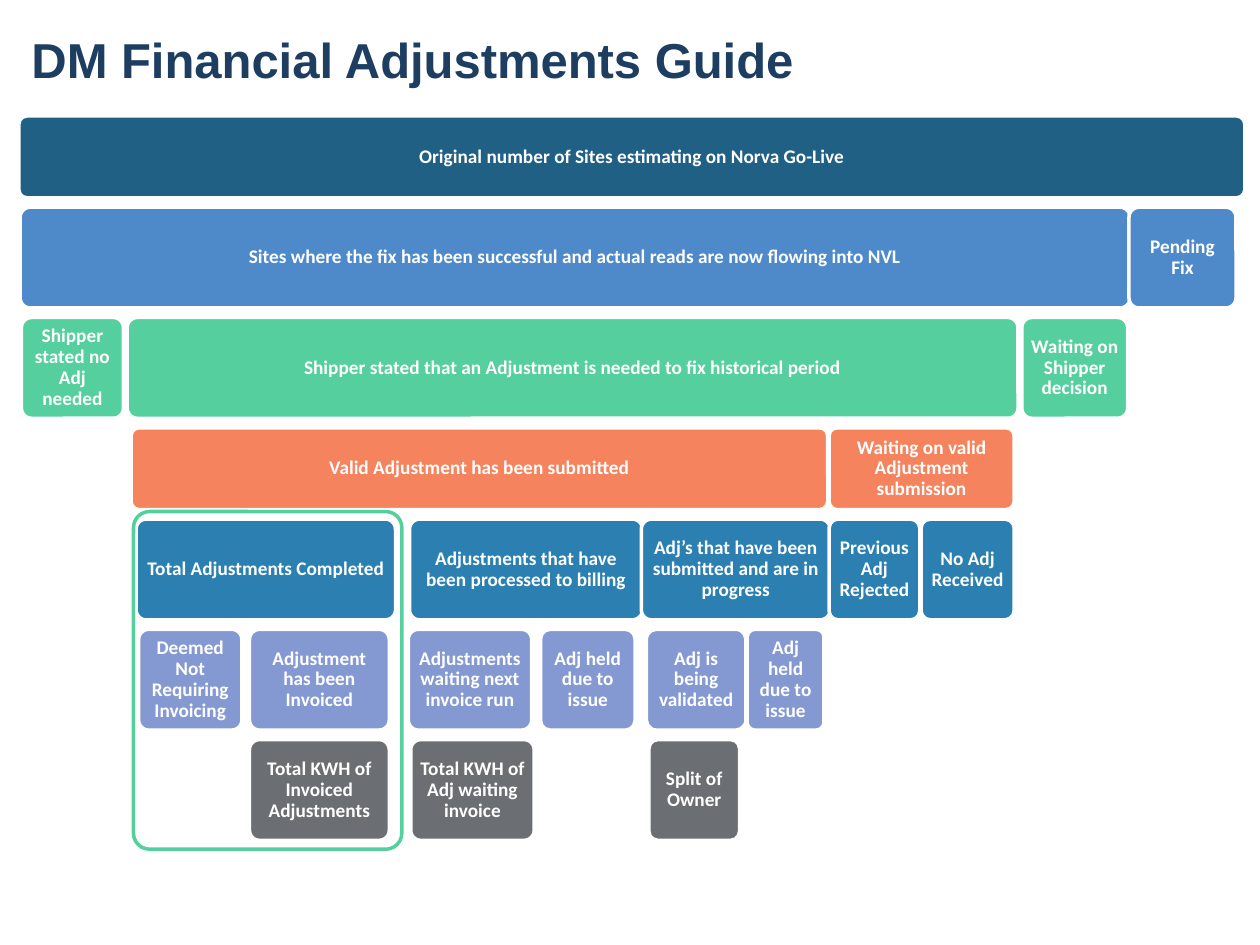
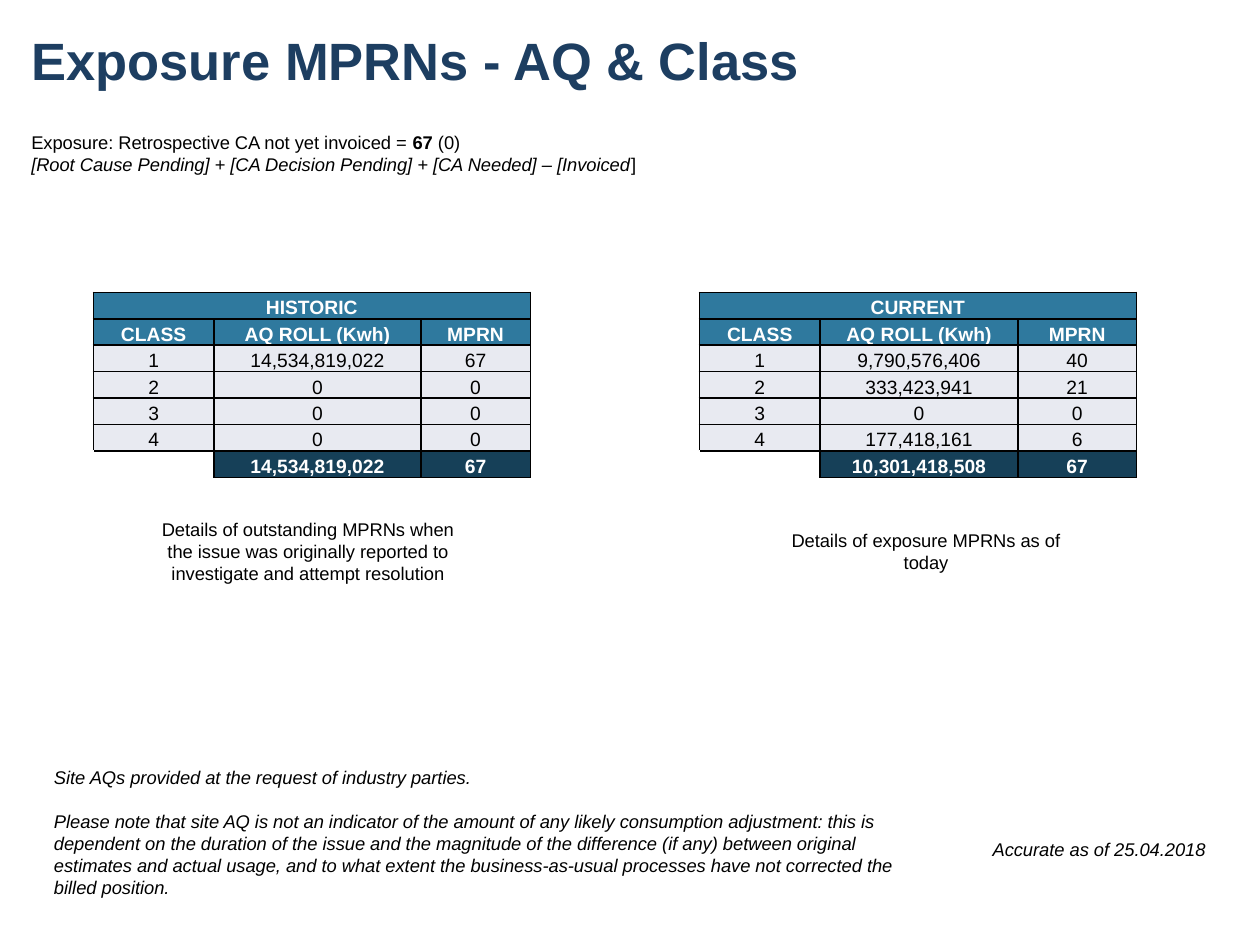
from typing import NamedTuple

from lxml import etree
from pptx import Presentation
from pptx import util as u
from pptx.dml.color import RGBColor
from pptx.enum import shapes, text
from pptx.oxml.ns import qn

WHITE = RGBColor(0xFF, 0xFF, 0xFF)
BLACK = RGBColor(0x00, 0x00, 0x00)
NAVY = RGBColor(0x1D, 0x3E, 0x61)
DEEP_TEAL = RGBColor(0x20, 0x60, 0x85)
SKY = RGBColor(0x4E, 0x8A, 0xCA)
GREEN = RGBColor(0x56, 0xCF, 0x9E)
CORAL = RGBColor(0xF5, 0x83, 0x5D)
BLUE = RGBColor(0x2B, 0x80, 0xB1)
LAVENDER = RGBColor(0x84, 0x99, 0xD2)
GREY = RGBColor(0x6B, 0x6E, 0x72)
HEADER = RGBColor(0x2F, 0x79, 0x9E)
BODY = RGBColor(0xE8, 0xEA, 0xF1)
TOTAL = RGBColor(0x16, 0x40, 0x58)

TITLE_FONT = dict(name="Arial", bold=True, color=NAVY)
BOX_FONT = dict(name="Calibri", size=u.Pt(11), bold=True, color=WHITE)
NOTE_FONT = dict(name="Arial", size=u.Pt(10.5), color=BLACK)
ITALIC_FONT = dict(NOTE_FONT, italic=True)
CELL_FONT = dict(name="Arial", size=u.Pt(11), color=BLACK)
STRONG_CELL_FONT = dict(CELL_FONT, bold=True, color=WHITE)

CENTER = text.PP_ALIGN.CENTER
LEFT = text.PP_ALIGN.LEFT
MARGINS = ("margin_left", "margin_right", "margin_top", "margin_bottom")
NO_MARGINS = dict.fromkeys(MARGINS, 0)
BOX_MARGINS = dict.fromkeys(MARGINS, u.Inches(0.05))
CELL_MARGINS = dict(dict.fromkeys(MARGINS, u.Inches(0.01)), margin_bottom=0)

LEVEL_TOP = u.Inches(0.92)
LEVEL_GAP = u.Inches(0.15) // 2
ROW_HEIGHT = u.Inches(0.21)


class Box(NamedTuple):
    label: str
    left: float
    width: float


class Level(NamedTuple):
    color: RGBColor
    height: float
    boxes: list[Box]


class Note(NamedTuple):
    area: tuple[float, float, float, float]
    align: text.PP_ALIGN
    paragraphs: list[list[tuple[str, dict]]]
    gap: float = 0


class ClassTable(NamedTuple):
    heading: str
    left: float
    widths: tuple[float, float, float]
    aq: list[int]
    mprn: list[int]


LEVELS = [
    Level(DEEP_TEAL, 0.65, [
        Box("Original number of Sites estimating on Norva Go-Live", 0.15, 9.73),
    ]),
    Level(SKY, 0.8, [
        Box("Sites where the fix has been successful and actual reads are now flowing into NVL",
            0.16, 8.81),
        Box("Pending Fix", 8.96, 0.85),
    ]),
    Level(GREEN, 0.8, [
        Box("Shipper stated no Adj needed", 0.17, 0.81),
        Box("Shipper stated that an Adjustment is needed to fix historical period", 1.01, 7.07),
        Box("Waiting on Shipper decision", 8.11, 0.84),
    ]),
    Level(CORAL, 0.65, [
        Box("Valid Adjustment has been submitted", 1.04, 5.53),
        Box("Waiting on valid Adjustment submission", 6.58, 1.47),
    ]),
    Level(BLUE, 0.8, [
        Box("Total Adjustments Completed", 1.08, 2.06),
        Box("Adjustments that have been processed to billing", 3.25, 1.85),
        Box("Adj’s that have been submitted and are in progress", 5.09, 1.5),
        Box("Previous Adj Rejected", 6.58, 0.72),
        Box("No Adj Received", 7.31, 0.74),
    ]),
    Level(LAVENDER, 0.8, [
        Box("Deemed Not Requiring Invoicing", 1.1, 0.82),
        Box("Adjustment has been Invoiced", 1.98, 1.11),
        Box("Adjustments waiting next invoice run", 3.24, 0.98),
        Box("Adj held due to issue", 4.29, 0.75),
        Box("Adj is being validated", 5.13, 0.79),
        Box("Adj held due to issue", 5.93, 0.61),
    ]),
    Level(GREY, 0.8, [
        Box("Total KWH of Invoiced Adjustments", 1.98, 1.11),
        Box("Total KWH of Adj waiting invoice", 3.26, 0.98),
        Box("Split of Owner", 5.15, 0.72),
    ]),
]

TABLES = [
    ClassTable("CURRENT", 5.55, (0.96, 1.57, 0.94),
               [9790576406, 333423941, 0, 177418161], [40, 21, 0, 6]),
    ClassTable("HISTORIC", 0.74, (0.96, 1.64, 0.87),
               [14534819022, 0, 0, 0], [67, 0, 0, 0]),
]

NOTES = [
    Note((7.71, 6.6, 2.03, 0.28), CENTER, [[("Accurate as of 25.04.2018", ITALIC_FONT)]]),
    Note((0.15, 0.99, 6.57, 0.47), LEFT, [
        [("Exposure: Retrospective CA not yet invoiced = ", NOTE_FONT),
         ("67 ", dict(NOTE_FONT, bold=True)), ("(0)", NOTE_FONT)],
        [("[Root Cause Pending] + [CA Decision Pending] + [CA Needed] – [Invoiced", ITALIC_FONT),
         ("]", NOTE_FONT)],
    ]),
    Note((1.14, 4.06, 2.61, 0.63), CENTER, [
        [("Details of outstanding MPRNs when the issue was originally reported to "
          "investigate and attempt resolution", NOTE_FONT)],
    ]),
    Note((6.18, 4.15, 2.34, 0.45), CENTER, [
        [("Details of exposure MPRNs as of today", NOTE_FONT)],
    ]),
    Note((0.33, 6.03, 7.19, 1.16), LEFT, [
        [("Site AQs provided at the request of industry parties.", ITALIC_FONT)],
        [("Please note that site AQ is not an indicator of the amount of any likely "
          "consumption adjustment: this is dependent on the duration of the issue and the "
          "magnitude of the difference (if any) between original estimates and actual usage, "
          "and to what extent the business-as-usual processes have not corrected the billed "
          "position.", ITALIC_FONT)],
    ], gap=12.5),
]


def set_values(target, values: dict) -> None:
    for name, value in values.items():
        setattr(target, name, value)


def add_run(p, content: str, font: dict) -> None:
    r = p.add_run()
    r.text = content
    set_values(r.font, {k: v for k, v in font.items() if k != "color"})
    r.font.color.rgb = font["color"]


def add_text_box(slide, area: tuple):
    tf = slide.shapes.add_textbox(*map(u.Inches, area)).text_frame
    tf.word_wrap = True
    return tf


def add_titled_slide(prs, title: str, size: float):
    slide = prs.slides.add_slide(prs.slide_layouts[6])
    tf = add_text_box(slide, (0.25, -0.06, 9.5, 1.06))
    set_values(tf, dict(NO_MARGINS, vertical_anchor=text.MSO_ANCHOR.MIDDLE))
    add_run(tf.paragraphs[0], title, dict(TITLE_FONT, size=u.Pt(size)))
    return slide


def add_rounded(slide, area: tuple, corner: float, line: RGBColor):
    sp = slide.shapes.add_shape(shapes.MSO_SHAPE.ROUNDED_RECTANGLE, *area)
    sp.adjustments[0] = corner
    sp.shadow.inherit = False
    sp.line.color.rgb = line
    sp.line.width = u.Pt(2)
    return sp


def draw_level(slide, level: Level, top: int) -> None:
    for box in level.boxes:
        area = (u.Inches(box.left), top, u.Inches(box.width), u.Inches(level.height))
        sp = add_rounded(slide, area, 0.1, WHITE)
        sp.fill.solid()
        sp.fill.fore_color.rgb = level.color
        tf = sp.text_frame
        set_values(tf, dict(BOX_MARGINS, word_wrap=True,
                            vertical_anchor=text.MSO_ANCHOR.MIDDLE))
        p = tf.paragraphs[0]
        set_values(p, dict(alignment=CENTER, line_spacing=0.9))
        add_run(p, box.label, BOX_FONT)


def draw_note(slide, note: Note) -> None:
    tf = add_text_box(slide, note.area)
    tf.auto_size = text.MSO_AUTO_SIZE.SHAPE_TO_FIT_TEXT
    for i, runs in enumerate(note.paragraphs):
        p = tf.add_paragraph() if i else tf.paragraphs[0]
        p.alignment = note.align
        if i and note.gap:
            p.space_before = u.Pt(note.gap)
        for content, font in runs:
            add_run(p, content, font)


def add_borders(cell, sides: str) -> None:
    tc_pr = cell._tc.get_or_add_tcPr()
    for side in sides:
        ln = etree.SubElement(tc_pr, qn(f"a:ln{side}"), w=str(u.Pt(1)))
        fill = etree.SubElement(ln, qn("a:solidFill"))
        etree.SubElement(fill, qn("a:srgbClr"), val=str(BLACK))


def draw_cell(cell, content: str, color: RGBColor) -> None:
    set_values(cell, dict(CELL_MARGINS, vertical_anchor=text.MSO_ANCHOR.BOTTOM))
    add_borders(cell, "LRTB")
    cell.fill.solid()
    cell.fill.fore_color.rgb = color
    p = cell.text_frame.paragraphs[0]
    p.alignment = CENTER
    if content:
        add_run(p, content, CELL_FONT if color == BODY else STRONG_CELL_FONT)


def draw_empty_cell(cell) -> None:
    set_values(cell, CELL_MARGINS)
    add_borders(cell, "RT")
    cell.fill.background()
    p = cell.text_frame.paragraphs[0]
    etree.SubElement(p._p, qn("a:endParaRPr"), sz="1100")


def draw_class_table(slide, data: ClassTable) -> None:
    rows = [(data.heading, "", ""), ("CLASS", "AQ ROLL (Kwh)", "MPRN")]
    rows += [(str(i), f"{aq:,}", str(mprn))
             for i, (aq, mprn) in enumerate(zip(data.aq, data.mprn), 1)]
    rows.append(("", f"{sum(data.aq):,}", str(sum(data.mprn))))
    colors = [HEADER] * 2 + [BODY] * len(data.aq) + [TOTAL]
    table = slide.shapes.add_table(
        len(rows), len(data.widths), u.Inches(data.left), u.Inches(2.32),
        u.Inches(sum(data.widths)), ROW_HEIGHT * len(rows)).table
    set_values(table, dict(first_row=False, horz_banding=False))
    for column, width in zip(table.columns, data.widths):
        column.width = u.Inches(width)
    table.cell(0, 0).merge(table.cell(0, 2))
    for i, (row, color) in enumerate(zip(rows, colors)):
        table.rows[i].height = ROW_HEIGHT
        for j, content in enumerate(row):
            if color == TOTAL and not content:
                draw_empty_cell(table.cell(i, j))
            else:
                draw_cell(table.cell(i, j), content, color)


def main() -> None:
    prs = Presentation()
    prs.slide_width, prs.slide_height = u.Inches(10), u.Inches(7.5)

    guide = add_titled_slide(prs, "DM Financial Adjustments Guide", 28)
    top = LEVEL_TOP
    for level in LEVELS:
        draw_level(guide, level, top)
        top += u.Inches(level.height) + LEVEL_GAP
    frame = tuple(map(u.Inches, (1.06, 4.06, 2.13, 2.68)))
    add_rounded(guide, frame, 0.06, GREEN).fill.background()

    exposure = add_titled_slide(prs, "Exposure MPRNs - AQ & Class", 30)
    for data in TABLES:
        draw_class_table(exposure, data)
    for note in NOTES:
        draw_note(exposure, note)

    prs.save("out.pptx")


if __name__ == "__main__":
    main()
